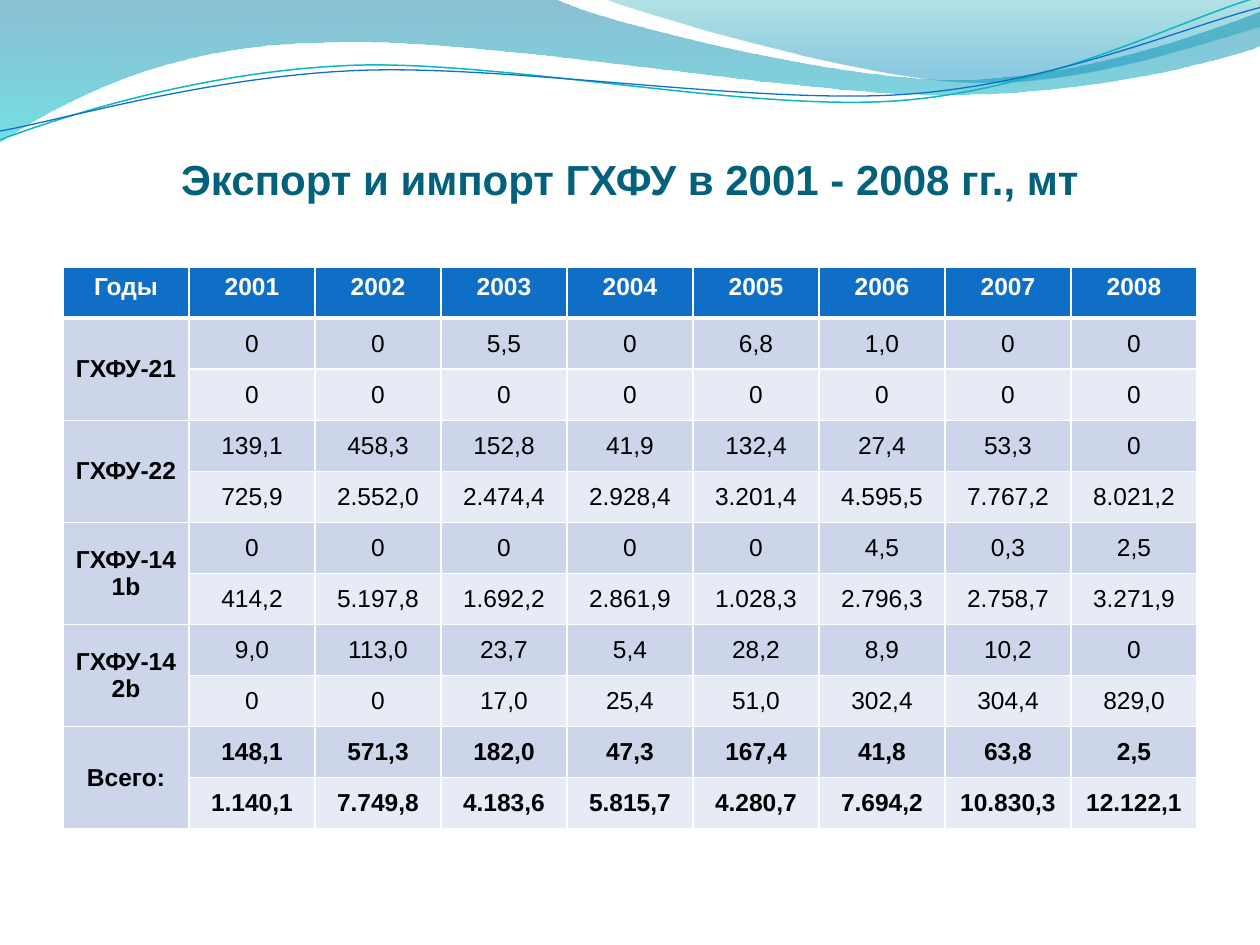
from pptx import Presentation
from pptx.dml.color import RGBColor
from pptx.enum import text
from pptx.oxml import parse_xml
from pptx.oxml.ns import nsdecls
from pptx.util import Inches, Pt

COLORS = {
    "title": "04617B", "header": "0F6FC6", "white": "FFFFFF", "black": "000000",
    "upper": "CCD5EA", "lower": "E7EBF5", "teal": "0AB8BF",
}
TITLE = "Экспорт и импорт ГХФУ в 2001 - 2008 гг., мт"
HEADER = ["Годы"] + [str(year) for year in range(2001, 2009)]
# Substance, then its two rows: export and import
GROUPS = [
    ("ГХФУ-21", "0 0 5,5 0 6,8 1,0 0 0", "0 0 0 0 0 0 0 0"),
    ("ГХФУ-22", "139,1 458,3 152,8 41,9 132,4 27,4 53,3 0",
     "725,9 2.552,0 2.474,4 2.928,4 3.201,4 4.595,5 7.767,2 8.021,2"),
    ("ГХФУ-141b", "0 0 0 0 0 4,5 0,3 2,5",
     "414,2 5.197,8 1.692,2 2.861,9 1.028,3 2.796,3 2.758,7 3.271,9"),
    ("ГХФУ-142b", "9,0 113,0 23,7 5,4 28,2 8,9 10,2 0",
     "0 0 17,0 25,4 51,0 302,4 304,4 829,0"),
    ("Всего:", "148,1 571,3 182,0 47,3 167,4 41,8 63,8 2,5",
     "1.140,1 7.749,8 4.183,6 5.815,7 4.280,7 7.694,2 10.830,3 12.122,1"),
]
# Pairs are straight-line points; six numbers are a cubic curve.
# Gradient stops: position %, colour, opacity %
BANDS = [
    ([(0, -0.01), (4.4, -0.01), (4.76, 0.17, 6.64, 0.63, 7.58, 0.63),
      (8.53, 0.63, 9.58, 0.26, 10, 0.09), (10.01, 0.36),
      (9.83, 0.44, 8.7, 0.76, 7.46, 0.75), (6.22, 0.75, 3.82, 0.28, 2.57, 0.34),
      (1.29, 0.35, 0.46, 0.83, -0.01, 1.13), (0, -0.01)],
     [(0, "0074A1", 45), (100, "00C6CF", 55)]),
    ([(4.79, -0.01), (5.09, 0.11, 6.82, 0.62, 7.69, 0.65),
      (8.56, 0.69, 9.61, 0.32, 10, 0.21), (10, 0), (4.79, -0.01)],
     [(0, "00A1A9", 30), (80, "008BBF", 45)]),
]
LINES = [
    ([(0, 1.11), (0.48, 0.93, 1.58, 0.57, 2.77, 0.52),
      (3.95, 0.47, 5.93, 0.89, 7.13, 0.8), (8.33, 0.71, 9.38, 0.15, 9.98, -0.02)],
     "teal", 0.85),
    ([(0, 1.04), (0.47, 0.96, 1.64, 0.61, 2.83, 0.56),
      (4.03, 0.51, 5.97, 0.83, 7.17, 0.75), (8.36, 0.67, 9.41, 0.21, 10, 0.06)],
     "header", 0.75),
]


def rgb(name):
    return RGBColor.from_string(COLORS[name])


def add_wave(s, segments, close):
    """Lay all points as straight segments, then join each curve's three into one."""
    start, *rest = [(Inches(seg[i]), Inches(seg[i + 1]))
                    for seg in segments for i in range(0, len(seg), 2)]
    builder = s.shapes.build_freeform(*start)
    builder.add_line_segments(rest, close=close)
    sp = builder.convert_to_shape()
    sp.shadow.inherit = False
    steps = iter(sp._element.findall(".//{*}lnTo"))
    for seg in segments[1:]:
        step = next(steps)
        if len(seg) == 2:
            continue
        curve = parse_xml(f'<a:cubicBezTo {nsdecls("a")}/>')
        step.addprevious(curve)
        for old in (step, next(steps), next(steps)):
            curve.append(old[0])
            old.getparent().remove(old)
    return sp


def set_gradient(sp, stops):
    """Fill from top to bottom with translucent stops."""
    sp.fill.background()
    no_fill = sp._element.spPr.find("{*}noFill")
    gs = "".join(
        f'<a:gs pos="{pos * 1000}"><a:srgbClr val="{color}">'
        f'<a:alpha val="{alpha * 1000}"/></a:srgbClr></a:gs>'
        for pos, color, alpha in stops)
    no_fill.getparent().replace(no_fill, parse_xml(
        f'<a:gradFill {nsdecls("a")}><a:gsLst>{gs}</a:gsLst>'
        '<a:lin ang="5400000" scaled="0"/></a:gradFill>'))


def set_borders(cell, top=1, bottom=1):
    tc_pr = cell._tc.get_or_add_tcPr()
    for side, width in (("L", 1), ("R", 1), ("T", top), ("B", bottom)):
        tc_pr.append(parse_xml(
            f'<a:ln{side} {nsdecls("a")} w="{Pt(width)}"><a:solidFill>'
            f'<a:srgbClr val="{COLORS["white"]}"/></a:solidFill></a:ln{side}>'))


def format_text(p, size, color, bold):
    p.alignment = text.PP_ALIGN.CENTER
    p.font.name, p.font.size, p.font.bold = "Arial", Pt(size), bold
    p.font.color.rgb = rgb(color)


def fill_cell(cell, value, row, col):
    header, label = row == 0, col == 0
    total = row > 2 * (len(GROUPS) - 1)
    set_borders(cell, top=3 if row == 1 else 1, bottom=3 if header else 1)
    cell.fill.solid()
    cell.fill.fore_color.rgb = rgb(
        "header" if header else "upper" if label or row % 2 else "lower")
    cell.text = value
    p = cell.text_frame.paragraphs[0]
    format_text(p, 14, "white" if header else "black", header or label or total)
    if header:
        return
    cell.vertical_anchor = text.MSO_ANCHOR.MIDDLE
    if not label:
        cell.margin_left = cell.margin_right = Inches(0.07)
        cell.margin_top = cell.margin_bottom = 0
        p.space_before = p.space_after = Pt(6)


def add_data_table(s):
    rows = [HEADER]
    for name, exports, imports in GROUPS:
        rows += [[name] + exports.split(), [""] + imports.split()]
    table = s.shapes.add_table(len(rows), len(HEADER), Inches(0.5), Inches(2.12),
                               Inches(9), Inches(4.46)).table
    for r, values in enumerate(rows):
        for c, value in enumerate(values):
            fill_cell(table.cell(r, c), value, r, c)
    for r in range(1, len(rows), 2):
        table.cell(r, 0).merge(table.cell(r + 1, 0))


def main():
    prs = Presentation()
    prs.slide_width, prs.slide_height = Inches(10), Inches(7.5)
    s = prs.slides.add_slide(prs.slide_layouts[5])

    for segments, stops in BANDS:
        sp = add_wave(s, segments, close=True)
        set_gradient(sp, stops)
        sp.line.fill.background()
    for segments, color, width in LINES:
        sp = add_wave(s, segments, close=False)
        sp.fill.background()
        sp.line.color.rgb = rgb(color)
        sp.line.width = Pt(width)

    title = s.shapes.title
    s.shapes._spTree.append(title._element)  # bring in front of the waves
    title.left, title.top = Inches(0.5), Inches(0.77)
    title.width, title.height = Inches(9), Inches(1.25)
    tf = title.text_frame
    tf.text = TITLE
    tf.word_wrap = True
    tf.auto_size = text.MSO_AUTO_SIZE.NONE
    tf.vertical_anchor = text.MSO_ANCHOR.BOTTOM
    tf.margin_left = tf.margin_right = 0
    tf.margin_top, tf.margin_bottom = Inches(0.05), Inches(0.4)
    format_text(tf.paragraphs[0], 24, "title", True)

    add_data_table(s)
    prs.save("out.pptx")


if __name__ == "__main__":
    main()
